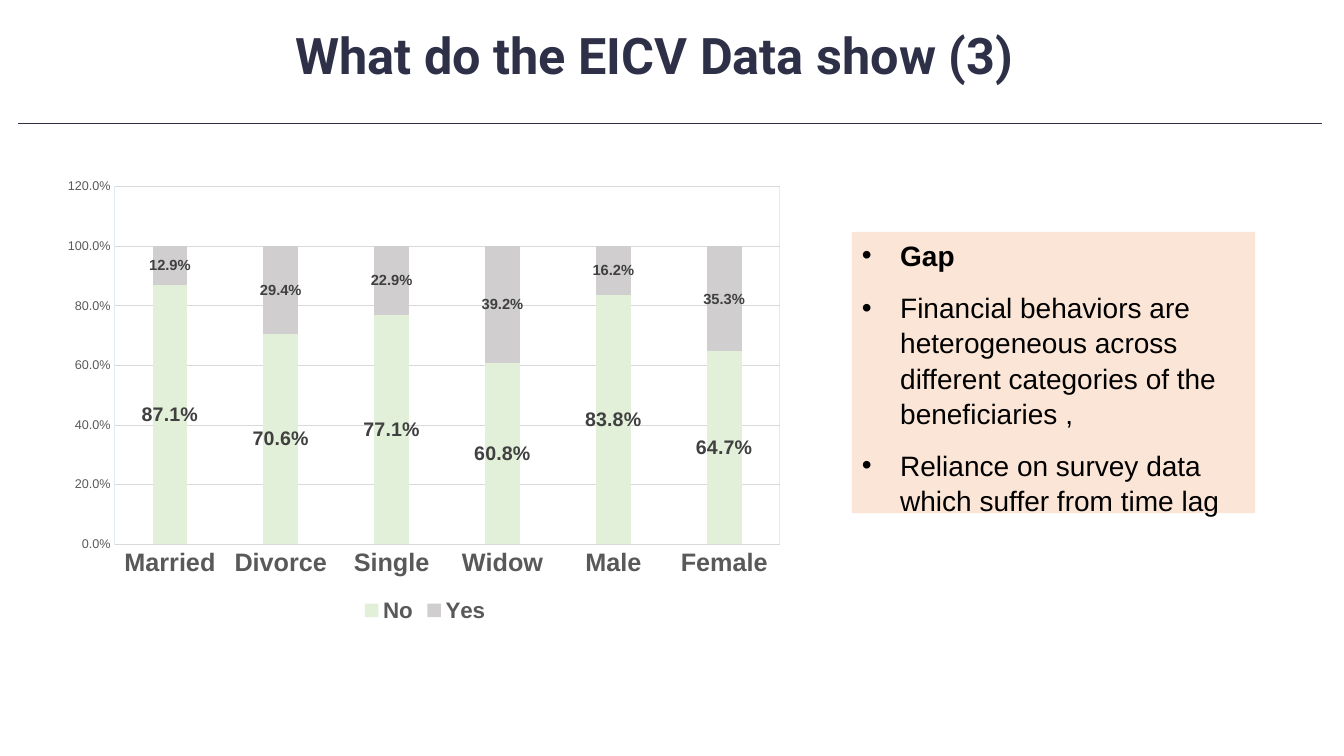
from lxml.etree import SubElement
from pptx import Presentation
from pptx.chart.data import CategoryChartData
from pptx.dml.color import RGBColor
from pptx.enum.chart import XL_CHART_TYPE as ChartType
from pptx.enum.chart import XL_LEGEND_POSITION as LegendPosition
from pptx.enum.chart import XL_TICK_MARK as TickMark
from pptx.enum.shapes import MSO_CONNECTOR as Connector
from pptx.enum.shapes import MSO_SHAPE as Shape
from pptx.enum.text import MSO_ANCHOR as Anchor
from pptx.enum.text import PP_ALIGN as Align
from pptx.oxml import parse_xml
from pptx.oxml.ns import nsdecls, qn
from pptx.util import Inches, Pt

TITLE = "What do the EICV Data show (3)"
CATEGORIES = ["Married", "Divorce", "Single", "Widow", "Male", "Female"]
# name, values, fill colour, label size
SERIES = [
    ("No", [0.871, 0.706, 0.771, 0.608, 0.838, 0.647], "no", 14),
    ("Yes", [0.129, 0.294, 0.229, 0.392, 0.162, 0.353], "yes", 10.5),
]
# text, bold
POINTS = [
    ("Gap", True),
    ("Financial behaviors are heterogeneous across different categories "
     "of the beneficiaries ,", False),
    ("Reliance on survey data which suffer from time lag", False),
]
COLORS = {
    "navy": "2E3048", "no": "E2F0D9", "yes": "D0CECE", "peach": "FBE5D6",
    "black": "000000", "label": "404040", "axis": "595959", "grid": "D9D9D9",
    "frame": "DEEBF7",
}
PERCENT = "0.0%"
WIDTH, HEIGHT = 13.33, 7.5
RULE_MARGIN, RULE_TOP = 0.18, 1.23
TITLE_BOX = (2.83, 0.15, 8.95, 0.86)
CHART_BOX = (0.55, 1.67, 7.33, 4.55)
GAP_BOX = (8.45, 2.3, 4, 2.79)
PLOT_SHARE = {"x": 0.08, "y": 0.04, "w": 0.9, "h": 0.78}  # of the chart's size
INDENT = 0.38


def rgb(name):
    return RGBColor.from_string(COLORS[name])


def inches(box):
    return [Inches(length) for length in box]


def style(font, size, color, bold=False, name="Arial"):
    font.name, font.size, font.bold = name, Pt(size), bold
    font.color.rgb = rgb(color)


def thin_line(line, color):
    line.color.rgb = rgb(color)
    line.width = Pt(0.75)


def add_rule(slide):
    top = Inches(RULE_TOP)
    rule = slide.shapes.add_connector(
        Connector.STRAIGHT, Inches(RULE_MARGIN), top,
        Inches(WIDTH - RULE_MARGIN - 0.04), top)
    thin_line(rule.line, "navy")
    SubElement(rule._element.spPr, qn("a:effectLst"))


def add_title(slide):
    frame = slide.shapes.add_textbox(*inches(TITLE_BOX)).text_frame
    frame.word_wrap = True
    frame.vertical_anchor = Anchor.MIDDLE
    paragraph = frame.paragraphs[0]
    paragraph.line_spacing = 0.9
    run = paragraph.add_run()
    run.text = TITLE
    style(run.font, 36, "navy", True, "Roboto")


def frame_plot(chart):
    """Fix the inner plot area's place and give it a pale outline."""
    plot_area = chart._chartSpace.chart.plotArea
    for old in plot_area.findall(qn("c:layout")):
        plot_area.remove(old)
    sizes = "".join(f'<c:{key} val="{share}"/>' for key, share in PLOT_SHARE.items())
    plot_area.insert(0, parse_xml(
        f'<c:layout {nsdecls("c")}><c:manualLayout><c:layoutTarget val="inner"/>'
        f'<c:xMode val="edge"/><c:yMode val="edge"/>{sizes}'
        '</c:manualLayout></c:layout>'))
    plot_area.append(parse_xml(
        f'<c:spPr {nsdecls("c", "a")}><a:noFill/><a:ln w="9525"><a:solidFill>'
        f'<a:srgbClr val="{COLORS["frame"]}"/></a:solidFill></a:ln></c:spPr>'))


def add_status_chart(slide):
    data = CategoryChartData(number_format=PERCENT)
    data.categories = CATEGORIES
    for name, values, _, _ in SERIES:
        data.add_series(name, values)
    chart = slide.shapes.add_chart(
        ChartType.COLUMN_STACKED, *inches(CHART_BOX), data).chart
    style(chart.font, 10, "black")
    chart.has_title = False
    chart.has_legend = True
    chart.legend.position = LegendPosition.BOTTOM
    chart.legend.include_in_layout = False
    style(chart.legend.font, 16, "axis", True)

    plot = chart.plots[0]
    plot.gap_width, plot.overlap, plot.vary_by_categories = 219, 100, False
    for series, (_, _, color, label_size) in zip(plot.series, SERIES):
        series.format.fill.solid()
        series.format.fill.fore_color.rgb = rgb(color)
        labels = series.data_labels
        labels.show_value = True
        labels.number_format, labels.number_format_is_linked = PERCENT, False
        style(labels.font, label_size, "label", True)

    for axis in (chart.category_axis, chart.value_axis):
        axis.major_tick_mark = axis.minor_tick_mark = TickMark.NONE
    thin_line(chart.category_axis.format.line, "grid")
    style(chart.category_axis.tick_labels.font, 18, "axis", True)
    values = chart.value_axis
    values.minimum_scale, values.maximum_scale, values.major_unit = 0, 1.2, 0.2
    values.format.line.fill.background()
    values.has_major_gridlines = True
    thin_line(values.major_gridlines.format.line, "grid")
    values.tick_labels.number_format = PERCENT
    values.tick_labels.number_format_is_linked = False
    style(values.tick_labels.font, 9, "axis")
    frame_plot(chart)


def add_bullet(paragraph):
    properties = paragraph._p.get_or_add_pPr()
    properties.set("marL", str(Inches(INDENT)))
    properties.set("indent", str(-Inches(INDENT)))
    color = SubElement(properties, qn("a:buClr"))
    SubElement(color, qn("a:srgbClr"), val=COLORS["black"])
    SubElement(properties, qn("a:buFont"), typeface="Arial")
    SubElement(properties, qn("a:buChar"), char="•")


def add_gap_panel(slide):
    panel = slide.shapes.add_shape(Shape.RECTANGLE, *inches(GAP_BOX))
    panel.shadow.inherit = False
    panel.fill.solid()
    panel.fill.fore_color.rgb = rgb("peach")
    panel.line.fill.background()
    frame = panel.text_frame
    frame.word_wrap = True
    frame.vertical_anchor = Anchor.TOP
    for index, (text, bold) in enumerate(POINTS):
        paragraph = frame.add_paragraph() if index else frame.paragraphs[0]
        add_bullet(paragraph)
        paragraph.alignment = Align.LEFT
        paragraph.line_spacing = 1.05
        paragraph.space_before = Pt(6 if index else 0)
        paragraph.space_after = Pt(6)
        run = paragraph.add_run()
        run.text = text
        style(run.font, 20, "black", bold)


def main():
    presentation = Presentation()
    presentation.slide_width, presentation.slide_height = inches((WIDTH, HEIGHT))
    slide = presentation.slides.add_slide(presentation.slide_layouts[6])
    add_rule(slide)
    add_status_chart(slide)
    add_gap_panel(slide)
    add_title(slide)
    presentation.save("out.pptx")


if __name__ == "__main__":
    main()
